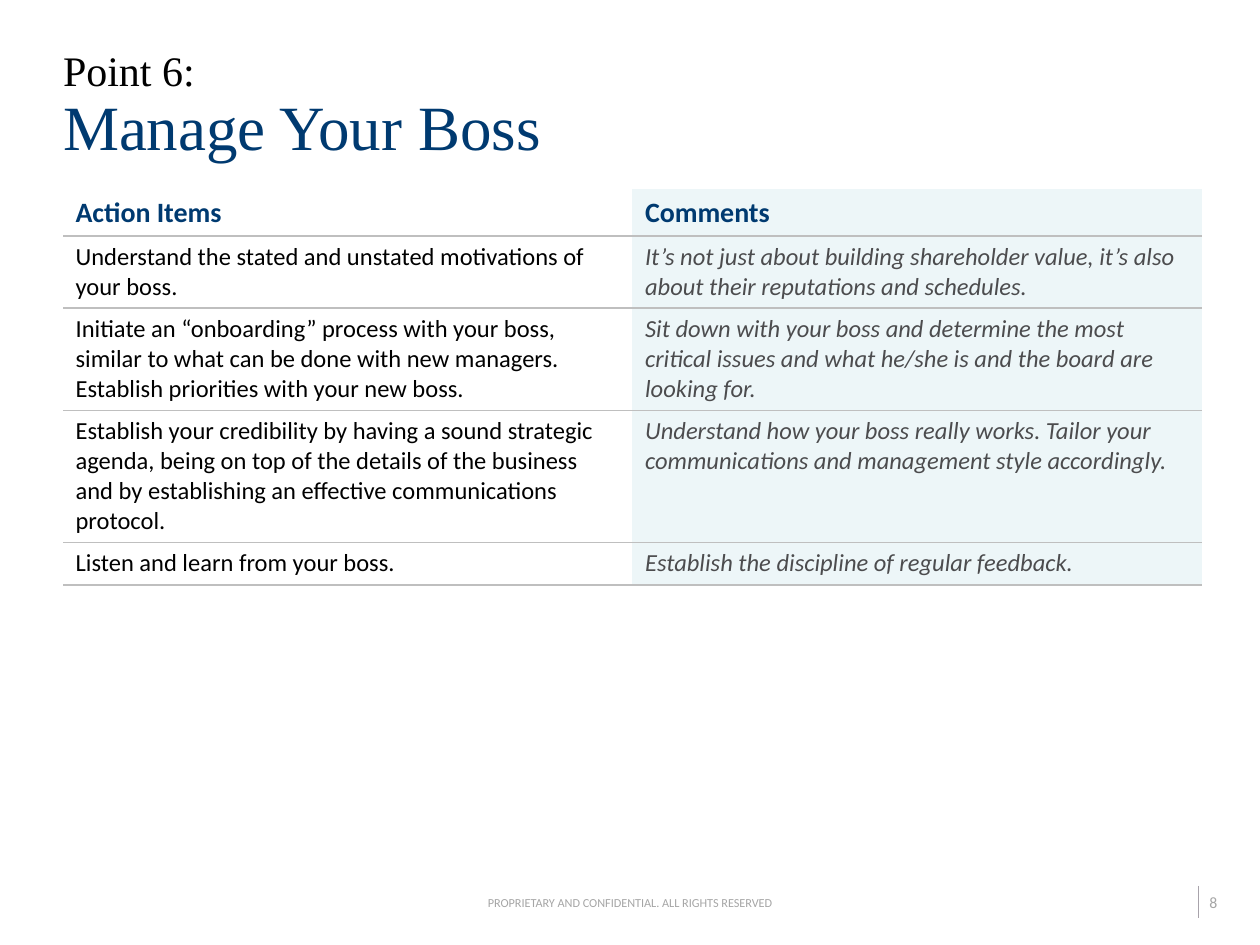
from lxml import etree
from pptx import Presentation
from pptx.dml.color import RGBColor
from pptx.enum.shapes import MSO_CONNECTOR
from pptx.enum.text import MSO_ANCHOR, MSO_AUTO_SIZE, PP_ALIGN
from pptx.oxml.ns import qn
from pptx.util import Cm, Pt

TOP, MIDDLE, BOTTOM = MSO_ANCHOR.TOP, MSO_ANCHOR.MIDDLE, MSO_ANCHOR.BOTTOM
LEFT, CENTER = PP_ALIGN.LEFT, PP_ALIGN.CENTER
STRAIGHT = MSO_CONNECTOR.STRAIGHT
NO_FIT = MSO_AUTO_SIZE.NONE

COLORS = {
    "black": "000000",
    "navy": "003A70",
    "comment": "4C4C4E",
    "white": "FFFFFF",
    "tint": "EDF6F8",
    "rule": "BFBFBF",
    "footer": "A6A6A6",
    "divider": "A8A3AB",
}
BODY, SERIF = "Calibri", "Times New Roman"

ROWS = [
    ("Action Items", "Comments"),
    ("Understand the stated and unstated motivations of your boss.",
     "It’s not just about building shareholder value, it’s also about their "
     "reputations and schedules."),
    ("Initiate an “onboarding” process with your boss, similar to what can be done "
     "with new managers. Establish priorities with your new boss.",
     "Sit down with your boss and determine the most critical issues and what "
     "he/she is and the board are looking for."),
    ("Establish your credibility by having a sound strategic agenda, being on top "
     "of the details of the business and by establishing an effective "
     "communications protocol.",
     "Understand how your boss really works. Tailor your communications and "
     "management style accordingly."),
    ("Listen and learn from your boss.",
     "Establish the discipline of regular feedback."),
]
ROW_HEIGHTS = [0.94, 1.45, 2.06, 2.66, 0.85]


def rgb(name):
    return RGBColor.from_string(COLORS[name])


def style(r, size, color, font=BODY, bold=False, italic=False):
    r.font.name, r.font.size = font, Pt(size)
    r.font.bold, r.font.italic = bold, italic
    r.font.color.rgb = rgb(color)


def set_insets(tf, left, top, right, bottom):
    tf.margin_left, tf.margin_top = Cm(left), Cm(top)
    tf.margin_right, tf.margin_bottom = Cm(right), Cm(bottom)


def set_border(cell, side, color=None):
    ln = etree.SubElement(cell._tc.get_or_add_tcPr(), qn(f"a:ln{side}"), w=str(Pt(1)))
    if color is None:
        etree.SubElement(ln, qn("a:noFill"))
    else:
        fill = etree.SubElement(ln, qn("a:solidFill"))
        etree.SubElement(fill, qn("a:srgbClr"), val=COLORS[color])


def add_title(s, x, y, w, h):
    sp = s.shapes.title
    sp.left, sp.top, sp.width, sp.height = Cm(x), Cm(y), Cm(w), Cm(h)
    tf = sp.text_frame
    tf.text = "Point 6:\vManage Your Boss"
    tf.word_wrap, tf.auto_size = True, NO_FIT
    tf.vertical_anchor = BOTTOM
    set_insets(tf, 0, 0.13, 0, 0.13)
    p = tf.paragraphs[0]
    p.alignment, p.line_spacing = LEFT, 0.9
    for r, size, color in zip(p.runs, (24, 36), ("black", "navy")):
        style(r, size, color, SERIF)
    etree.SubElement(p._p.find(qn("a:br")), qn("a:rPr"), sz="2400")


def add_action_table(s, x, y, w):
    table = s.shapes.add_table(len(ROWS), 2, Cm(x), Cm(y), Cm(w),
                               Cm(sum(ROW_HEIGHTS))).table
    table.horz_banding = False
    for col in table.columns:
        col.width = Cm(w / 2)
    for i, (texts, height) in enumerate(zip(ROWS, ROW_HEIGHTS)):
        table.rows[i].height = Cm(height)
        header = i == 0
        for j, text in enumerate(texts):
            cell = table.cell(i, j)
            cell.text = text
            cell.vertical_anchor = MIDDLE if header else TOP
            r = cell.text_frame.paragraphs[0].runs[0]
            if header:
                style(r, 16, "navy", bold=True)
            else:
                style(r, 14, ("black", "comment")[j], italic=j == 1)
            set_border(cell, "L")
            set_border(cell, "R")
            set_border(cell, "T", None if header else "rule")
            set_border(cell, "B", "rule")
            cell.fill.solid()
            cell.fill.fore_color.rgb = rgb(("white", "tint")[j])


def add_label(s, text, size, x, y, w, h, insets, align, anchor):
    tf = s.shapes.add_textbox(Cm(x), Cm(y), Cm(w), Cm(h)).text_frame
    tf.text = text
    tf.word_wrap, tf.vertical_anchor = False, anchor
    set_insets(tf, *insets)
    p = tf.paragraphs[0]
    p.alignment = align
    style(p.runs[0], size, "footer")


def add_footer(s, x, y, w, h):
    notice_w, number_w = 5.8, 1.02
    add_label(s, "PROPRIETARY AND CONFIDENTIAL. ALL RIGHTS RESERVED", 7,
              x + (w - notice_w) / 2, y + 0.18, notice_w, 0.3,
              (0, 0, 0, 0), CENTER, MIDDLE)
    number_x = x + w - 0.25 - number_w
    add_label(s, "8", 9, number_x, y, number_w, h,
              (0.25, 0.13, 0, 0.13), LEFT, TOP)
    line = s.shapes.add_connector(STRAIGHT, Cm(number_x + 0.03), Cm(y),
                                  Cm(number_x + 0.03), Cm(y + h))
    line.line.color.rgb, line.line.width = rgb("divider"), Pt(0.5)
    etree.SubElement(line._element.spPr, qn("a:effectLst"))


def main():
    prs = Presentation()
    prs.slide_width, prs.slide_height = Cm(25.4), Cm(19.05)
    s = prs.slides.add_slide(prs.slide_layouts[5])
    add_title(s, 1.27, 0.64, 22.86, 2.79)
    add_action_table(s, 1.27, 3.81, 22.96)
    add_footer(s, 0, 17.86, 25.4, 0.64)
    prs.save("out.pptx")


if __name__ == "__main__":
    main()
